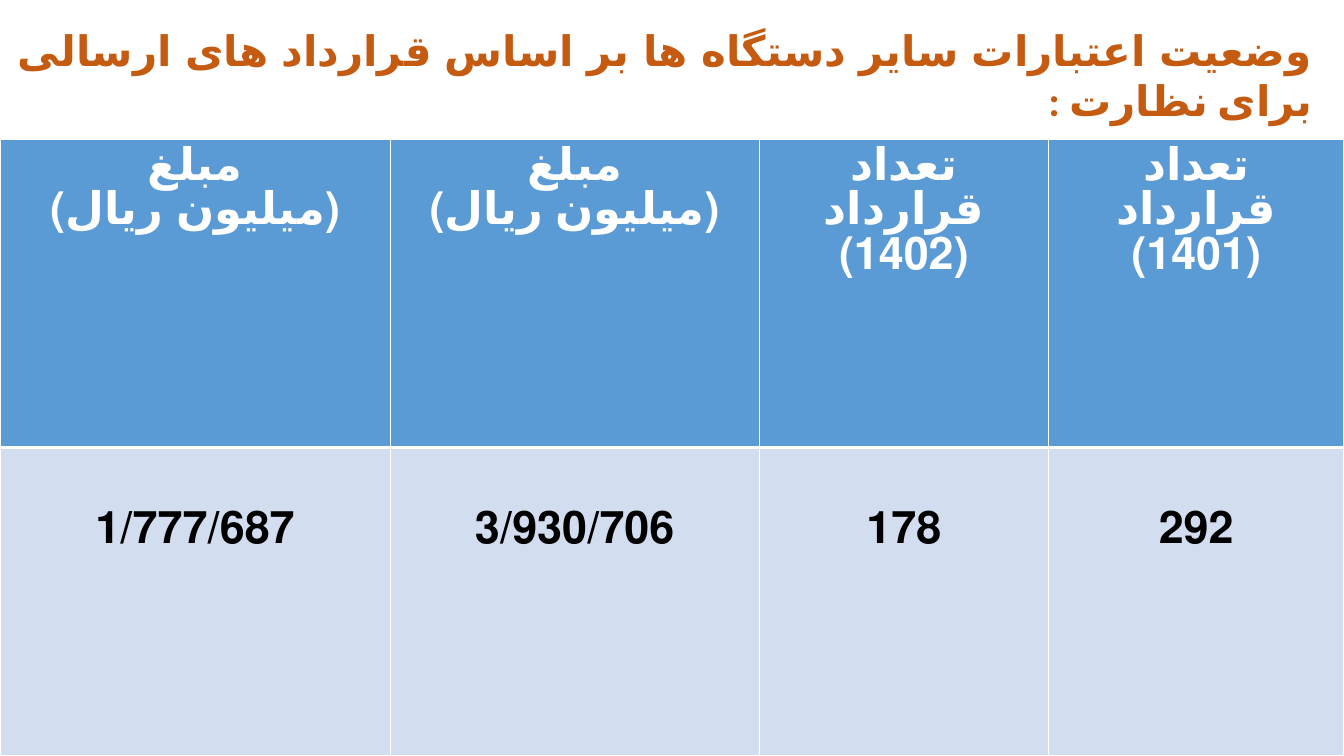
from pptx import Presentation
from pptx.dml.color import RGBColor
from pptx.enum.text import MSO_AUTO_SIZE, PP_ALIGN
from pptx.oxml.xmlchemy import OxmlElement
from pptx.util import Inches, Pt

CENTER = PP_ALIGN.CENTER
JUSTIFY = PP_ALIGN.JUSTIFY
GROW = MSO_AUTO_SIZE.SHAPE_TO_FIT_TEXT

FONT = "Calibri"
LANGUAGE = "fa-IR"
COLORS = {
    "title": "C55A11",
    "header": "5B9BD5",
    "body": "D2DEEF",
    "white": "FFFFFF",
    "black": "000000",
}

TITLE = "وضعیت اعتبارات سایر دستگاه ها بر اساس قرارداد های ارسالی برای نظارت :"
COLUMN_WIDTHS = [3.87, 3.66, 2.87, 2.93]
ROW_HEIGHT = 3.06
AMOUNT = "مبلغ\n(میلیون ریال)"
HEADERS = [AMOUNT, AMOUNT, "تعداد قرارداد (1402)", "تعداد\nقرارداد\n(1401)"]
VALUES = ["1/777/687", "3/930/706", "178", "292"]


def rgb(name):
    return RGBColor.from_string(COLORS[name])


def write_text(frame, text, size, color, align, line_points=None, complex_font=None):
    """Fill a frame with bold right-to-left paragraphs, one per line of text."""
    for index, line in enumerate(text.split("\n")):
        paragraph = frame.add_paragraph() if index else frame.paragraphs[0]
        paragraph.alignment = align
        paragraph._p.get_or_add_pPr().set("rtl", "1")
        if line_points:
            paragraph.line_spacing = Pt(line_points)
        run = paragraph.add_run()
        run.text = line
        run.font.size = Pt(size)
        run.font.bold = True
        run.font.name = FONT
        run.font.color.rgb = rgb(color)
        # The language steers the choice of the Persian letterforms
        run.font._element.set("lang", LANGUAGE)
        if complex_font:
            script_font = OxmlElement("a:cs")
            script_font.set("typeface", complex_font)
            run.font._element.append(script_font)


def set_borders(cell, **widths):
    """Draw white cell borders; widths are in points per side."""
    properties = cell._tc.get_or_add_tcPr()
    for index, side in enumerate(("L", "R", "T", "B")):
        border = OxmlElement(f"a:ln{side}")
        border.set("w", str(Pt(widths.get(side, 1))))
        fill = OxmlElement("a:solidFill")
        color = OxmlElement("a:srgbClr")
        color.set("val", COLORS["white"])
        fill.append(color)
        border.append(fill)
        properties.insert(index, border)


def add_title(slide):
    title = slide.shapes.add_textbox(Inches(0.08), Inches(0.19), Inches(13.04), Inches(0.61))
    title.text_frame.word_wrap = True
    title.text_frame.auto_size = GROW
    write_text(title.text_frame, TITLE, size=30, color="title", align=JUSTIFY,
               complex_font=FONT)


def fill_cell(cell, text, fill, color, top_margin, **borders):
    cell.fill.solid()
    cell.fill.fore_color.rgb = rgb(fill)
    cell.margin_top = Inches(top_margin)
    write_text(cell.text_frame, text, size=32, color=color, align=CENTER, line_points=32)
    set_borders(cell, **borders)


def add_contract_table(slide):
    contracts = slide.shapes.add_table(
        2, len(HEADERS), Inches(0), Inches(1.38),
        Inches(sum(COLUMN_WIDTHS)), Inches(2 * ROW_HEIGHT)).table
    contracts.horz_banding = False
    for row in contracts.rows:
        row.height = Inches(ROW_HEIGHT)
    for index, width in enumerate(COLUMN_WIDTHS):
        contracts.columns[index].width = Inches(width)
        fill_cell(contracts.cell(0, index), HEADERS[index], "header", "white", 0.05, B=3)
        # The values sit one line below the top of their row
        fill_cell(contracts.cell(1, index), VALUES[index], "body", "black", 0.6, T=3)


def main():
    deck = Presentation()
    deck.slide_width = Inches(13.33)
    deck.slide_height = Inches(7.5)
    slide = deck.slides.add_slide(deck.slide_layouts[6])
    add_title(slide)
    add_contract_table(slide)
    deck.save("out.pptx")


if __name__ == "__main__":
    main()
